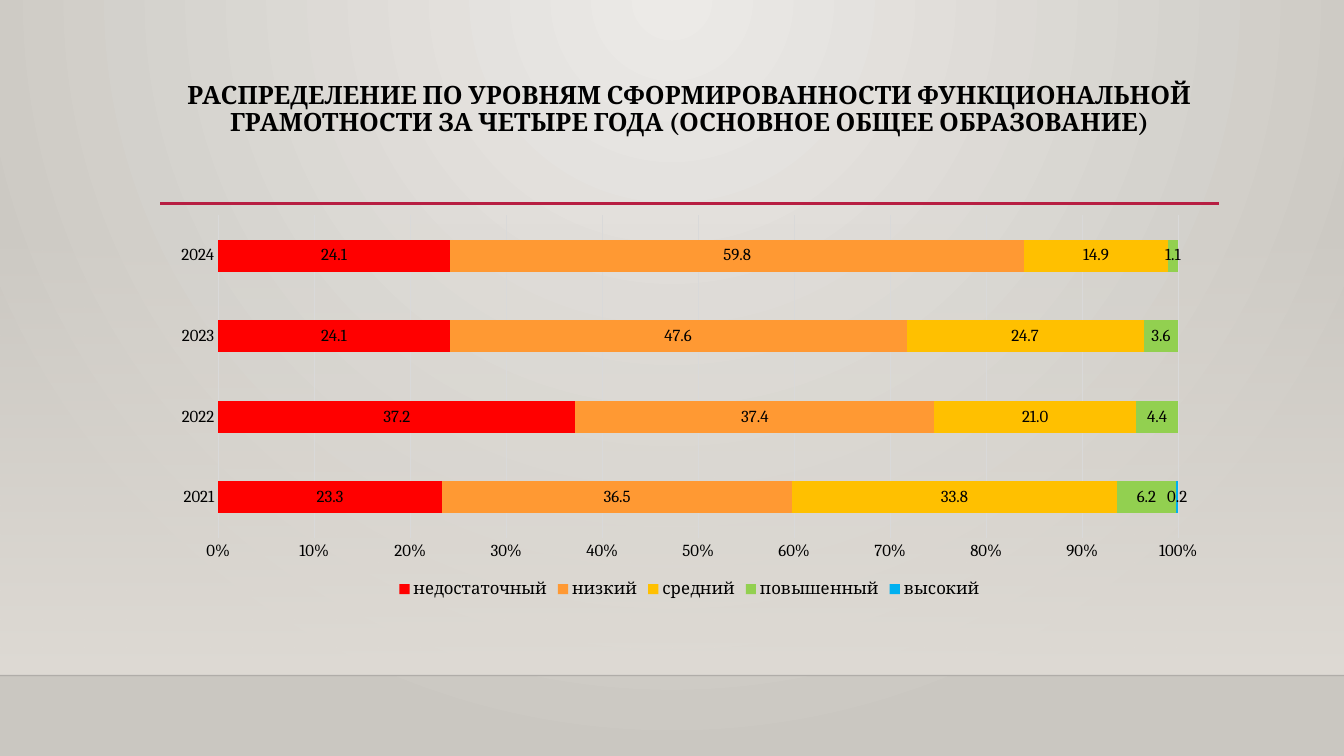
from lxml import etree
from pptx import Presentation
from pptx.chart.data import CategoryChartData
from pptx.dml.color import RGBColor
from pptx.enum.chart import XL_CHART_TYPE, XL_LABEL_POSITION, XL_LEGEND_POSITION, XL_TICK_MARK
from pptx.enum.shapes import MSO_CONNECTOR, MSO_SHAPE
from pptx.enum.text import MSO_ANCHOR, PP_ALIGN
from pptx.oxml.ns import qn
from pptx.util import Pt

STACKED_BAR = XL_CHART_TYPE.BAR_STACKED_100
NO_TICK = XL_TICK_MARK.NONE
FONT = "Cambria"
COLORS = {
    "text": "000000",
    "rule": "B71E42",
    "floor_line": "000001",
    "grid": "D9D9D9",
    "wall_light": "ECEAE7",
    "wall_dark": "CAC7C1",
    "haze": "DFDBD5",
    "недостаточный": "FF0000",
    "низкий": "FF9933",
    "средний": "FFC000",
    "повышенный": "92D050",
    "высокий": "00B0F0",
}
YEARS = ["2021", "2022", "2023", "2024"]
LEVELS = {
    "недостаточный": [23.3, 37.2, 24.1, 24.1],
    "низкий": [36.5, 37.4, 47.6, 59.8],
    "средний": [33.8, 21, 24.7, 14.9],
    "повышенный": [6.2, 4.4, 3.6, 1.1],
    "высокий": [0.2, None, None, None],
}


def rgb(name):
    return RGBColor.from_string(COLORS[name])


def set_font(font, size):
    font.name = FONT
    font.size = Pt(size)
    font.color.rgb = rgb("text")


prs = Presentation()
prs.slide_width, prs.slide_height = Pt(960), Pt(540)
slide = prs.slides.add_slide(prs.slide_layouts[6])

wall = slide.background.fill
wall.gradient()
for stop, name, position in zip(wall.gradient_stops, ("wall_light", "wall_dark"), (0, 1)):
    stop.color.rgb = rgb(name)
    stop.position = position
wall_gradient = next(slide.element.iter(qn("a:gradFill")))
wall_gradient.remove(wall_gradient.find(qn("a:lin")))
radial = etree.SubElement(wall_gradient, qn("a:path"), {"path": "circle"})
etree.SubElement(radial, qn("a:fillToRect"), {"l": "43000", "t": "0", "r": "43000", "b": "100000"})

haze = slide.shapes.add_shape(MSO_SHAPE.RECTANGLE, 0, Pt(159), Pt(960), Pt(323.5))
haze.shadow.inherit = False
haze.line.fill.background()
haze.fill.gradient()
for stop, position in zip(haze.fill.gradient_stops, (0, 1)):
    stop.color.rgb = rgb("haze")
    stop.position = position
haze.fill.gradient_angle = 270
clear_color = next(haze.element.iter(qn("a:gs")))[0]
etree.SubElement(clear_color, qn("a:alpha"), {"val": "0"})

for name, left, right, y, width, opacity in (
    ("floor_line", 0, 960, 482.5, 1, 20),
    ("rule", 114.5, 871, 145.3, 2.5, 100),
):
    divider = slide.shapes.add_connector(MSO_CONNECTOR.STRAIGHT, Pt(left), Pt(y), Pt(right), Pt(y))
    divider.line.color.rgb = rgb(name)
    divider.line.width = Pt(width)
    etree.SubElement(divider.element.spPr, qn("a:effectLst"))
    if opacity < 100:
        line_color = next(divider.element.iter(qn("a:srgbClr")))
        etree.SubElement(line_color, qn("a:alpha"), {"val": str(opacity * 1000)})

heading = slide.shapes.add_textbox(Pt(114.5), Pt(39.6), Pt(756), Pt(77.8)).text_frame
heading.word_wrap = True
heading.vertical_anchor = MSO_ANCHOR.MIDDLE
paragraph = heading.paragraphs[0]
paragraph.alignment = PP_ALIGN.CENTER
paragraph.line_spacing = 0.9
run = paragraph.add_run()
run.text = (
    "РАСПРЕДЕЛЕНИЕ ПО УРОВНЯМ СФОРМИРОВАННОСТИ ФУНКЦИОНАЛЬНОЙ "
    "ГРАМОТНОСТИ ЗА ЧЕТЫРЕ ГОДА (ОСНОВНОЕ ОБЩЕЕ ОБРАЗОВАНИЕ)"
)
set_font(run.font, 18)
run.font.bold = True

results = CategoryChartData(number_format="0.0")
results.categories = YEARS
for level, shares in LEVELS.items():
    results.add_series(level, shares)
chart = slide.shapes.add_chart(STACKED_BAR, Pt(114.5), Pt(148.3), Pt(756), Pt(282.2), results).chart
set_font(chart.font, 12)
chart.has_title = False
chart.has_legend = True
chart.legend.position = XL_LEGEND_POSITION.BOTTOM
chart.legend.include_in_layout = False
set_font(chart.legend.font, 12)

plot = chart.plots[0]
plot.gap_width = 150
plot.overlap = 100
plot.vary_by_categories = False
for series in plot.series:
    series.format.fill.solid()
    series.format.fill.fore_color.rgb = rgb(series.name)
    labels = series.data_labels
    labels.show_value = True
    labels.number_format = "0.0"
    labels.number_format_is_linked = False
    labels.position = XL_LABEL_POSITION.CENTER
    set_font(labels.font, 12)

years_axis, share_axis = chart.category_axis, chart.value_axis
for axis in (years_axis, share_axis):
    axis.major_tick_mark = NO_TICK
    axis.minor_tick_mark = NO_TICK
    set_font(axis.tick_labels.font, 12)
years_axis.format.line.color.rgb = rgb("grid")
years_axis.format.line.width = Pt(0.75)
share_axis.format.line.fill.background()
share_axis.has_major_gridlines = True
share_axis.major_gridlines.format.line.color.rgb = rgb("grid")
share_axis.major_gridlines.format.line.width = Pt(0.75)
share_axis.tick_labels.number_format = "0%"
share_axis.tick_labels.number_format_is_linked = False

prs.save("out.pptx")
